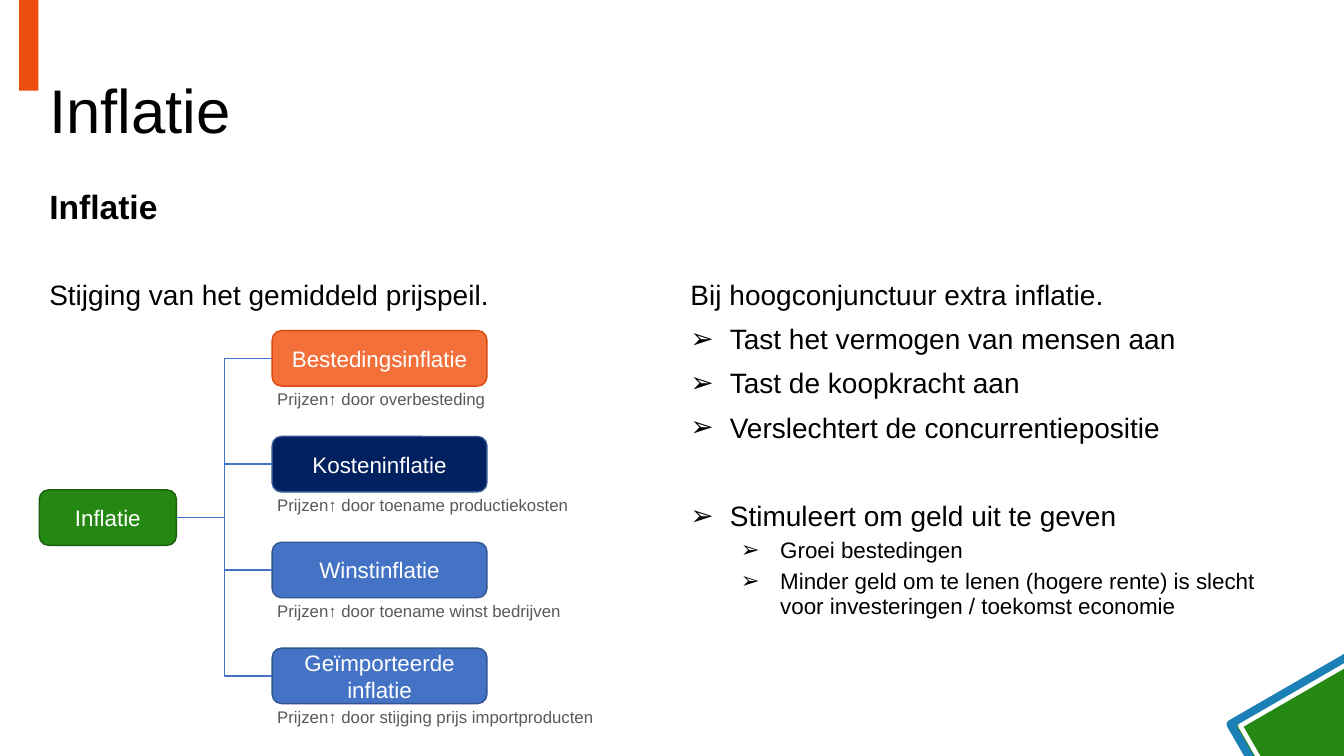
from lxml.etree import SubElement
from pptx import Presentation
from pptx.dml.color import RGBColor
from pptx.enum.shapes import MSO_CONNECTOR, MSO_SHAPE
from pptx.enum.text import MSO_ANCHOR, MSO_AUTO_SIZE, PP_ALIGN
from pptx.oxml.ns import qn
from pptx.util import Inches, Pt

BLACK = RGBColor(0x00, 0x00, 0x00)
WHITE = RGBColor(0xFF, 0xFF, 0xFF)
GREY = RGBColor(0x59, 0x59, 0x59)
GREEN = RGBColor(0x25, 0x88, 0x12)
DARK_GREEN = RGBColor(0x1B, 0x5F, 0x0D)
ORANGE = RGBColor(0xF3, 0x70, 0x3B)
DARK_ORANGE = RGBColor(0xDD, 0x48, 0x0D)
ACCENT_ORANGE = RGBColor(0xED, 0x4D, 0x0F)
NAVY = RGBColor(0x00, 0x20, 0x60)
BLUE = RGBColor(0x44, 0x72, 0xC4)
DARK_BLUE = RGBColor(0x32, 0x54, 0x91)
CORNER_BLUE = RGBColor(0x1A, 0x80, 0xB6)

LEFT = Inches(0.39)
RIGHT_COLUMN = Inches(6.75)
COLUMN_WIDTH = Inches(6.18)
SUBTITLE_TOP = Inches(1.84)
SUBTITLE_HEIGHT = Inches(0.9)
BODY_TOP = SUBTITLE_TOP + SUBTITLE_HEIGHT
BODY_HEIGHT = Inches(4.36)
CAUSE_LEFT = Inches(2.7)
CAUSE_TOP = Inches(3.28)
CAUSE_STEP = Inches(1.05)
CAUSE_WIDTH = Inches(2.13)
BOX_HEIGHT = Inches(0.55)
CAPTION_LEFT = Inches(2.65)
CAPTION_OFFSET = Inches(0.53)

presentation = Presentation()
presentation.slide_width = Inches(13.33)
presentation.slide_height = Inches(7.5)
slide = presentation.slides.add_slide(presentation.slide_layouts[5])
shapes = slide.shapes


def write(paragraph, text, size, color, bold=False):
    paragraph.text = text
    for run in paragraph.runs:
        run.font.name = "Arial"
        run.font.size = Pt(size)
        run.font.color.rgb = color
        run.font.bold = bold


def add_box(kind, left, top, width, height, fill=None, line=None, weight=1):
    box = shapes.add_shape(kind, left, top, width, height)
    box.shadow.inherit = False
    if fill is None:
        box.fill.background()
    else:
        box.fill.solid()
        box.fill.fore_color.rgb = fill
    if line is None:
        box.line.fill.background()
    else:
        box.line.color.rgb = line
        box.line.width = Pt(weight)
    return box


for left, top, side, fill, line, weight in [
    (12.48, 6.71, 1.5, GREEN, CORNER_BLUE, 6),
    (12.55, 6.77, 1.36, None, WHITE, 3.25),
]:
    corner = add_box(MSO_SHAPE.RECTANGLE, Inches(left), Inches(top),
                     Inches(side), Inches(side), fill, line, weight)
    corner.rotation = 60
add_box(MSO_SHAPE.RECTANGLE, Inches(0.19), Inches(-0.25),
        Inches(0.19), Inches(1.15), ACCENT_ORANGE)

title = shapes.title
title.left, title.top = LEFT, Inches(0.4)
title.width, title.height = Inches(12.56), Inches(1.45)
title.text_frame.vertical_anchor = MSO_ANCHOR.MIDDLE
heading = title.text_frame.paragraphs[0]
write(heading, "Inflatie", 44, BLACK)
heading.alignment = PP_ALIGN.LEFT
heading.line_spacing = 0.9

effects = [
    ("Bij hoogconjunctuur extra inflatie.", 20, False, 10, None),
    ("Tast het vermogen van mensen aan", 20, False, 10, 0),
    ("Tast de koopkracht aan", 20, False, 10, 0),
    ("Verslechtert de concurrentiepositie", 20, False, 10, 0),
    ("Stimuleert om geld uit te geven", 20, False, 41.5, 0),
    ("Groei bestedingen", 16, False, 5, 1),
    ("Minder geld om te lenen (hogere rente) is slecht "
     "voor investeringen / toekomst economie", 16, False, 5, 1),
]
for left, top, height, lines in [
    (LEFT, SUBTITLE_TOP, SUBTITLE_HEIGHT, [("Inflatie", 24, True, 10, None)]),
    (LEFT, BODY_TOP, BODY_HEIGHT,
     [("Stijging van het gemiddeld prijspeil.", 20, False, 10, None)]),
    (RIGHT_COLUMN, BODY_TOP, BODY_HEIGHT, effects),
]:
    frame = shapes.add_textbox(left, top, COLUMN_WIDTH, height).text_frame
    frame.word_wrap = True
    for index, (text, size, bold, space, level) in enumerate(lines):
        paragraph = frame.add_paragraph() if index else frame.paragraphs[0]
        write(paragraph, text, size, BLACK, bold)
        paragraph.line_spacing = 0.9
        paragraph.space_before = Pt(space)
        if level is not None:
            paragraph.level = level
            properties = paragraph._p.get_or_add_pPr()
            properties.set("marL", str(Inches(0.39 + 0.5 * level)))
            properties.set("indent", str(-LEFT))
            SubElement(properties, qn("a:buFont")).set("typeface", "Arial")
            SubElement(properties, qn("a:buChar")).set("char", "➢")

inflation = add_box(MSO_SHAPE.ROUNDED_RECTANGLE, LEFT, Inches(4.86),
                    Inches(1.36), BOX_HEIGHT, GREEN, DARK_GREEN)
labelled = [(inflation, "Inflatie")]

causes = [
    ("Bestedingsinflatie", "Prijzen↑ door overbesteding", 2.28, ORANGE, DARK_ORANGE),
    ("Kosteninflatie", "Prijzen↑ door toename productiekosten", 3.11, NAVY, DARK_BLUE),
    ("Winstinflatie", "Prijzen↑ door toename winst bedrijven", 3.03, BLUE, DARK_BLUE),
    ("Geïmporteerde inflatie", "Prijzen↑ door stijging prijs importproducten",
     3.36, BLUE, DARK_BLUE),
]
for row, (name, explanation, width, fill, line) in enumerate(causes):
    top = CAUSE_TOP + row * CAUSE_STEP
    cause = add_box(MSO_SHAPE.ROUNDED_RECTANGLE, CAUSE_LEFT, top,
                    CAUSE_WIDTH, BOX_HEIGHT, fill, line)
    labelled.append((cause, name))

    branch = shapes.add_connector(
        MSO_CONNECTOR.ELBOW,
        inflation.left + inflation.width, inflation.top + BOX_HEIGHT // 2,
        CAUSE_LEFT, top + BOX_HEIGHT // 2)
    branch.begin_connect(inflation, 3)
    branch.end_connect(cause, 1)
    branch.line.color.rgb = BLUE
    branch.line.width = Pt(1)
    SubElement(branch._element.spPr, qn("a:effectLst"))

    caption = shapes.add_textbox(CAPTION_LEFT, top + CAPTION_OFFSET,
                                 Inches(width), Inches(0.3)).text_frame
    caption.word_wrap = False
    caption.auto_size = MSO_AUTO_SIZE.SHAPE_TO_FIT_TEXT
    write(caption.paragraphs[0], explanation, 12, GREY)

for box, name in labelled:
    box.text_frame.word_wrap = True
    box.text_frame.vertical_anchor = MSO_ANCHOR.MIDDLE
    label = box.text_frame.paragraphs[0]
    write(label, name, 16, WHITE)
    label.alignment = PP_ALIGN.CENTER

presentation.save("out.pptx")
